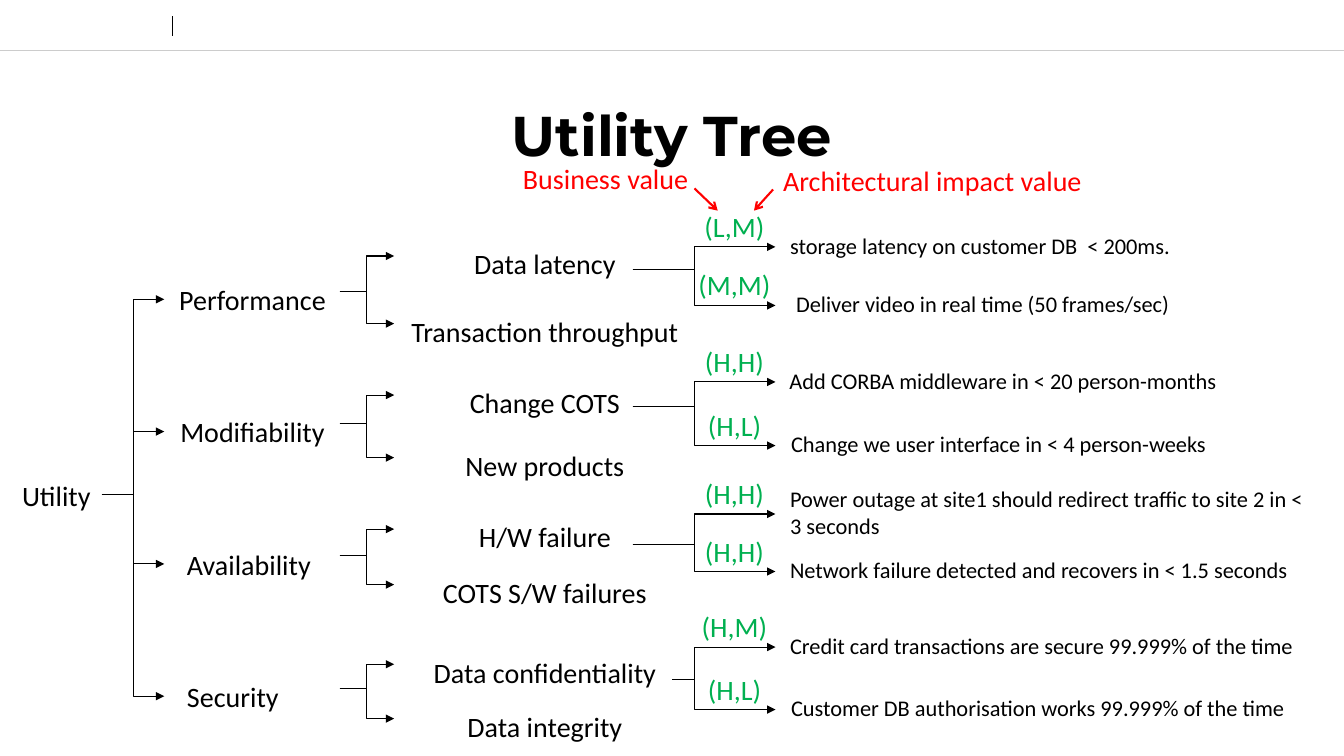
from dataclasses import dataclass

from lxml import etree
from pptx import Presentation
from pptx import util as u
from pptx.dml.color import RGBColor
from pptx.enum import shapes, text
from pptx.oxml.ns import qn

LEFT, CENTER = text.PP_ALIGN.LEFT, text.PP_ALIGN.CENTER


@dataclass(frozen=True)
class Theme:
    """Colours, fonts and type sizes of the slide."""
    ink: str = "000000"
    rating: str = "00B050"
    note: str = "FF0000"
    rule: str = "CCCCCC"
    heading: str = "Montserrat"
    body: str = "Calibri"
    title_size: int = 40
    label_size: int = 20
    scenario_size: int = 16


class TreeSlide:
    """Draws a tree on one slide, on a grid of 40 columns and 30 rows."""

    def __init__(self, deck, theme):
        """Open a title-only slide and measure its grid."""
        self.theme = theme
        self.slide = deck.slides.add_slide(deck.slide_layouts[5])
        self.column, self.row = deck.slide_width / 40, deck.slide_height / 30

    def place(self, col, row):
        """Turn a grid position into slide lengths."""
        return u.Emu(round(col * self.column)), u.Emu(round(row * self.row))

    def set_words(self, frame, words, size, color, align, font):
        """Fill a text frame with one formatted paragraph."""
        frame.text = words
        frame.word_wrap = True
        frame.vertical_anchor = text.MSO_ANCHOR.MIDDLE
        paragraph = frame.paragraphs[0]
        paragraph.alignment = align
        run_font = paragraph.runs[0].font
        run_font.size, run_font.name = u.Pt(size), font
        run_font.color.rgb = RGBColor.from_string(color)
        return run_font

    def title(self, words, row, height):
        """Set the slide title across the full width."""
        heading = self.slide.shapes.title
        heading.left, heading.top = self.place(0, row)
        heading.width, heading.height = self.place(40, height)
        self.set_words(heading.text_frame, words, self.theme.title_size,
                       self.theme.ink, CENTER, self.theme.heading).bold = True

    def label(self, words, col, middle, width, align=LEFT, size=None, color=None, height=1.76):
        """Add a text label centred vertically on a row."""
        box = self.slide.shapes.add_textbox(
            *self.place(col, middle - height / 2), *self.place(width, height))
        self.set_words(box.text_frame, words, size or self.theme.label_size,
                       color or self.theme.ink, align, self.theme.body)

    def line(self, start, end, color, weight, head=None, bend=None):
        """Add a straight line, or an elbow that turns at the bend column."""
        kind = shapes.MSO_CONNECTOR.STRAIGHT if bend is None else shapes.MSO_CONNECTOR.ELBOW
        link = self.slide.shapes.add_connector(kind, *self.place(*start), *self.place(*end))
        link.line.color.rgb = RGBColor.from_string(color)
        link.line.width = u.Pt(weight)
        properties = link._element.spPr
        if head:
            etree.SubElement(properties.find(qn("a:ln")), qn("a:tailEnd"), type=head)
        if bend is not None:
            share = round((bend - start[0]) / (end[0] - start[0]) * 100000)
            guides = properties.find(qn("a:prstGeom")).find(qn("a:avLst"))
            etree.SubElement(guides, qn("a:gd"), name="adj1", fmla=f"val {share}")
        etree.SubElement(properties, qn("a:effectLst"))

    def fork(self, start, bend, end_col, end_rows):
        """Branch from one point to several rows."""
        for end_row in end_rows:
            self.line(start, (end_col, end_row), self.theme.ink, 0.75, "triangle", bend)


QUALITIES = [("Performance", 4.89, CENTER), ("Modifiability", 4.89, CENTER),
             ("Availability", 5.27, LEFT), ("Security", 5.27, LEFT)]
CONCERNS = [
    (("Data latency", 10.46), ("Transaction throughput", 13.14)),
    (("Change COTS", 15.98), ("New products", 18.46)),
    (("H/W failure", 21.3), ("COTS S/W failures", 23.5)),
    (("Data confidentiality", 26.66), ("Data integrity", 28.82)),
]
SCENARIOS = [
    (18.83, 10.7, (("(L,M)", "storage latency on customer DB  < 200ms.", 23.22, 9.8),
                   ("(M,M)", "Deliver video in real time (50 frames/sec)", 23.4, 12.12))),
    (18.83, 16.12, (("(H,H)", "Add CORBA middleware in < 20 person-months", 23.2, 15.16),
                    ("(H,L)", "Change we user interface in < 4 person-weeks", 23.25, 17.68))),
    (18.83, 21.6, (("(H,H)", "Power outage at site1 should redirect traffic to site 2 in < 3 seconds",
                    23.22, 20.4),
                   ("(H,H)", "Network failure detected and recovers in < 1.5 seconds", 23.22, 22.68))),
    (20.01, 26.98, (("(H,M)", "Credit card transactions are secure 99.999% of the time", 23.22, 25.68),
                    ("(H,L)", "Customer DB authorisation works 99.999% of the time", 23.25, 28.16))),
]


def main():
    """Build the utility tree slide."""
    deck = Presentation()
    deck.slide_width, deck.slide_height = u.Inches(13.33), u.Inches(7.5)
    theme = Theme()
    tree = TreeSlide(deck, theme)

    tree.line((0, 2), (40, 2), theme.rule, 0.25)
    tree.line((5.13, 0.64), (5.13, 1.44), theme.ink, 0.5)
    tree.title("Utility Tree", 3.68, 3.32)

    quality_rows = [11.88 + 5.25 * i for i in range(len(QUALITIES))]
    tree.label("Utility", 0.36, 19.64, 3)
    tree.fork((3.03, 19.64), 3.96, 4.89, quality_rows)

    for (quality, col, align), row, concerns in zip(QUALITIES, quality_rows, CONCERNS):
        tree.label(quality, col, row, 5.25, align)
        tree.fork((10.11, row - 0.32), 10.92, 11.73, [middle - 0.3 for _, middle in concerns])
        for concern, middle in concerns:
            tree.label(concern, 11.73, middle, 8.97, CENTER)

    for start_col, start_row, scenarios in SCENARIOS:
        tree.fork((start_col, start_row), 20.66, 23.08, [row for *_, row in scenarios])
        for rating, scenario, col, row in scenarios:
            tree.label(scenario, col, row - 0.07, 16.14, size=theme.scenario_size, height=1.48)
            tree.label(rating, 20.48, row - 0.82, 2.76, CENTER, color=theme.rating)

    tree.label("Business value", 15.27, 7.08, 6, color=theme.note)
    tree.label("Architectural impact value", 23.01, 7.16, 9.63, color=theme.note)
    tree.line((20.67, 7.48), (21.36, 8.36), theme.note, 1.5, "arrow")
    tree.line((23.01, 7.52), (22.44, 8.36), theme.note, 1.5, "arrow")

    deck.save("out.pptx")


if __name__ == "__main__":
    main()
